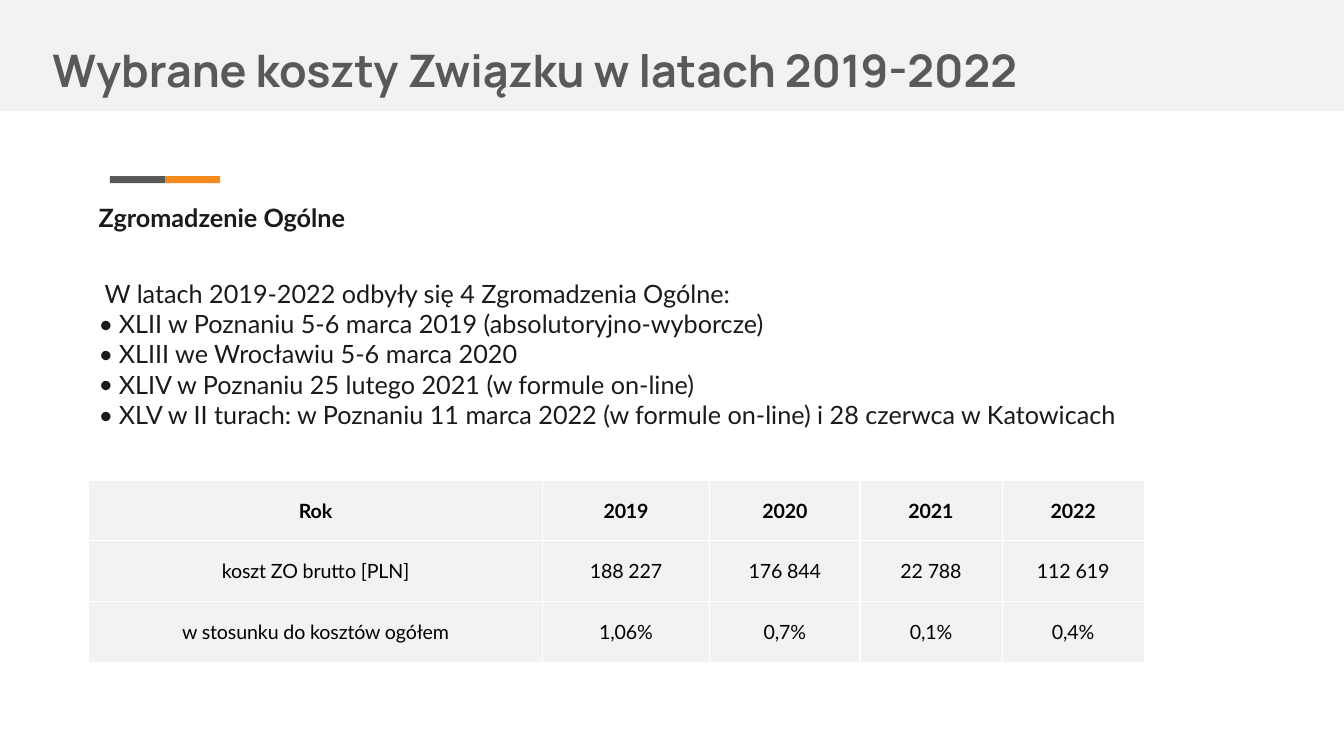
from dataclasses import dataclass

from lxml import etree
from pptx import Presentation
from pptx.dml.color import RGBColor
from pptx.enum.shapes import MSO_SHAPE
from pptx.enum.text import MSO_ANCHOR, MSO_AUTO_SIZE, PP_ALIGN
from pptx.oxml.ns import qn
from pptx.util import Inches, Pt

RECT = MSO_SHAPE.RECTANGLE
MIDDLE = MSO_ANCHOR.MIDDLE
NO_FIT = MSO_AUTO_SIZE.NONE
LEFT, CENTER = PP_ALIGN.LEFT, PP_ALIGN.CENTER
SLIDE_W, SLIDE_H = Inches(13.33), Inches(7.5)


@dataclass(frozen=True)
class Theme:
    grey: str = "58595B"
    orange: str = "F68B1F"
    panel: str = "F2F2F2"
    white: str = "FFFFFF"
    ink: str = "1A1A1A"
    black: str = "000000"
    title_font: str = "Manrope"
    body_font: str = "Lato"
    title_size: int = 32
    body_size: int = 18
    table_size: int = 14


THEME = Theme()
TITLE = "Wybrane koszty Związku w latach 2019-2022"
HEADING = "Zgromadzenie Ogólne"
INTRO = "W latach 2019-2022 odbyły się 4 Zgromadzenia Ogólne:"
ASSEMBLIES = [
    "XLII w Poznaniu 5-6 marca 2019 (absolutoryjno-wyborcze)",
    "XLIII we Wrocławiu 5-6 marca 2020",
    "XLIV w Poznaniu 25 lutego 2021 (w formule on-line)",
    "XLV w II turach: w Poznaniu 11 marca 2022 (w formule on-line) i 28 czerwca w Katowicach",
]
COSTS = [
    ["Rok", "2019", "2020", "2021", "2022"],
    ["koszt ZO brutto [PLN]", "188 227", "176 844", "22 788", "112 619"],
    ["w stosunku do kosztów ogółem", "1,06%", "0,7%", "0,1%", "0,4%"],
]
COL_WEIGHTS = [4.5, 1.66, 1.49, 1.41, 1.41]
ROW_WEIGHTS = [0.59, 0.61, 0.61]


def area(left, top, width, height):
    """Turn percentages of the slide into lengths."""
    return (int(SLIDE_W * left / 100), int(SLIDE_H * top / 100),
            int(SLIDE_W * width / 100), int(SLIDE_H * height / 100))


def add_run(p, text, font, size, color, bold=False):
    r = p.add_run()
    r.text = text
    r.font.name, r.font.size, r.font.bold = font, Pt(size), bold
    r.font.color.rgb = RGBColor.from_string(color)
    return r


def add_block(s, box, color):
    sp = s.shapes.add_shape(RECT, *box)
    sp.shadow.inherit = False
    sp.fill.solid()
    sp.fill.fore_color.rgb = RGBColor.from_string(color)
    sp.line.fill.background()


def indent(p, margin, hanging=0.0, bullet=None):
    pPr = p._p.get_or_add_pPr()
    pPr.set("marL", str(Inches(margin)))
    pPr.set("indent", str(-Inches(hanging)))
    if bullet:
        etree.SubElement(pPr, qn("a:buFont")).set("typeface", THEME.body_font)
        etree.SubElement(pPr, qn("a:buChar")).set("char", bullet)


def add_title(s, box):
    title = s.shapes.title
    title.left, title.top, title.width, title.height = box
    s.shapes._spTree.append(title._element)  # in front of the band
    tf = title.text_frame
    tf.word_wrap, tf.auto_size, tf.vertical_anchor = True, NO_FIT, MIDDLE
    tf.margin_left = tf.margin_right = tf.margin_top = tf.margin_bottom = Inches(0.1)
    p = tf.paragraphs[0]
    p.alignment, p.line_spacing = LEFT, 1.5
    add_run(p, TITLE, THEME.title_font, THEME.title_size, THEME.grey, True)


def add_body(s, box):
    tf = s.shapes.add_textbox(*box).text_frame
    tf.word_wrap = True
    style = (THEME.body_font, THEME.body_size, THEME.ink)
    add_run(tf.paragraphs[0], HEADING, *style, bold=True)
    p = tf.add_paragraph()
    indent(p, 0.06)
    p.space_before = Pt(32.5)
    add_run(p, INTRO, *style)
    for assembly in ASSEMBLIES:
        p = tf.add_paragraph()
        indent(p, 0.2, hanging=0.2, bullet="•")
        add_run(p, assembly, *style)


def set_borders(cell, color, width):
    tcPr = cell._tc.get_or_add_tcPr()
    for side in ("lnL", "lnR", "lnT", "lnB"):
        ln = etree.SubElement(tcPr, qn(f"a:{side}"), w=str(Pt(width)))
        fill = etree.SubElement(ln, qn("a:solidFill"))
        etree.SubElement(fill, qn("a:srgbClr"), val=color)


def fill_cell(cell, text, bold):
    set_borders(cell, THEME.white, 1)
    cell.fill.solid()
    cell.fill.fore_color.rgb = RGBColor.from_string(THEME.panel)
    cell.vertical_anchor = MIDDLE
    cell.margin_left = cell.margin_right = Inches(0.03)
    cell.margin_top = cell.margin_bottom = 0
    p = cell.text_frame.paragraphs[0]
    p.alignment, p.space_after = CENTER, Pt(10)
    r = add_run(p, text, THEME.body_font, THEME.table_size, THEME.black, bold)
    r.font._element.set("spc", "-10")


def add_cost_table(s, box):
    table = s.shapes.add_table(len(COSTS), len(COSTS[0]), *box).table
    for col, weight in zip(table.columns, COL_WEIGHTS):
        col.width = int(box[2] * weight / sum(COL_WEIGHTS))
    for row, weight in zip(table.rows, ROW_WEIGHTS):
        row.height = int(box[3] * weight / sum(ROW_WEIGHTS))
    for i, values in enumerate(COSTS):
        for j, value in enumerate(values):
            fill_cell(table.cell(i, j), value, bold=i == 0)


def main():
    prs = Presentation()
    prs.slide_width, prs.slide_height = SLIDE_W, SLIDE_H
    s = prs.slides.add_slide(prs.slide_layouts[5])

    # Header band and two-colour accent
    add_block(s, area(0, 0, 100, 14.7), THEME.panel)
    for i, color in enumerate((THEME.grey, THEME.orange)):
        add_block(s, area(8.18 + 4.1 * i, 23.3, 4.1, 0.93), color)

    # Text, costs and title
    add_body(s, area(6.6, 26.13, 91.6, 31.6))
    add_cost_table(s, area(6.6, 63.6, 78.54, 24.1))
    add_title(s, area(3.15, 0, 84.1, 14.8))
    prs.save("out.pptx")


if __name__ == "__main__":
    main()
